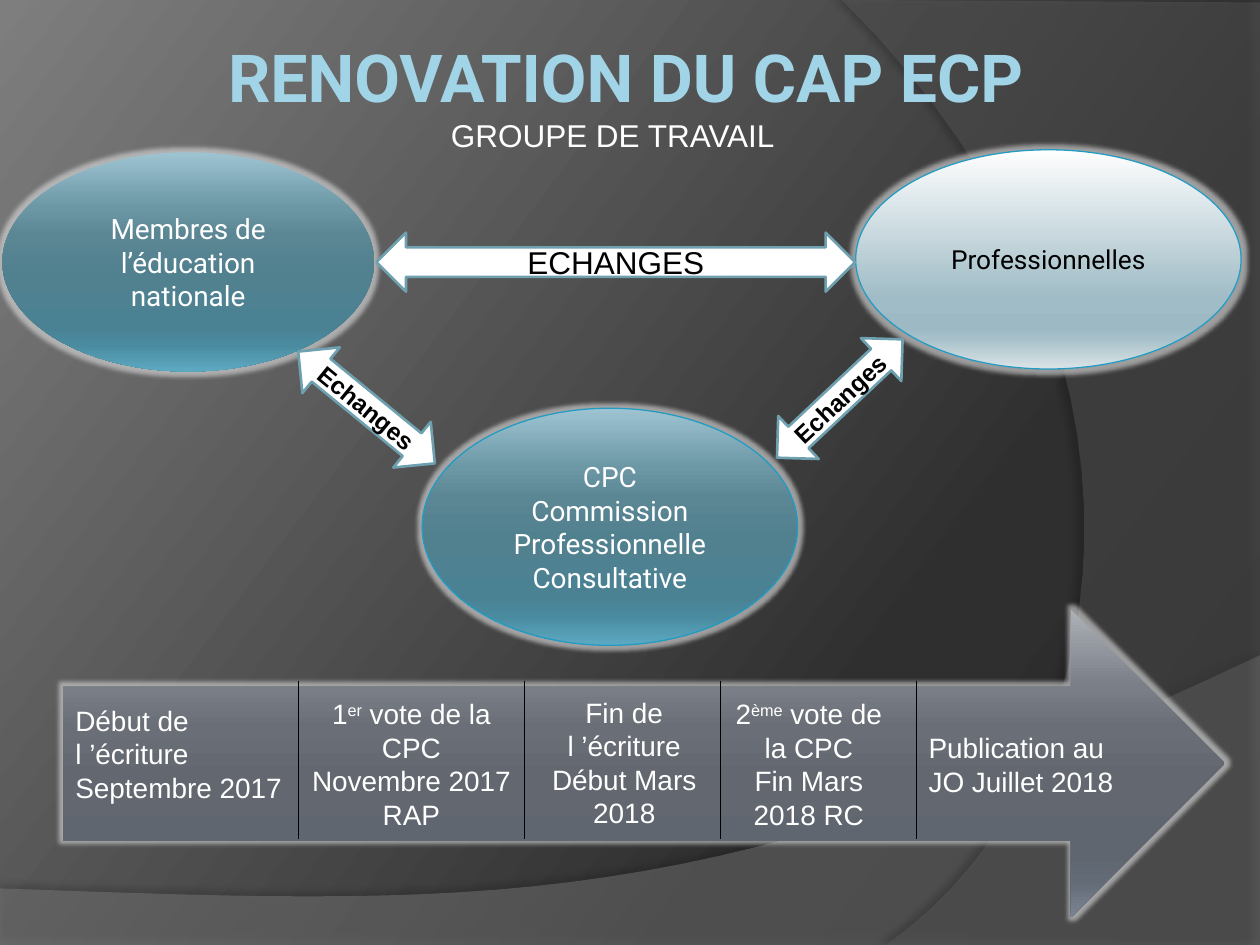
from lxml import etree
from pptx import Presentation
from pptx.dml.color import RGBColor
from pptx.enum.shapes import MSO_CONNECTOR, MSO_SHAPE
from pptx.enum.text import MSO_ANCHOR, PP_ALIGN
from pptx.oxml import parse_xml
from pptx.oxml.ns import qn
from pptx.util import Cm, Pt

NS = 'xmlns:a="http://schemas.openxmlformats.org/drawingml/2006/main"'
COLORS = {"white": "FFFFFF", "black": "000000", "title": "A1D4E7", "outline": "239BC2",
          "arrow": "6EA0B0", "glow": "E0E0E0", "swoosh": "7F7F7F", "disc": "5E5E5E"}
GRADIENTS = {  # angle, then (position, colour)
    "page": (217, [(0, "282828"), (30, "2F2F2F"), (100, "7E7E7E")]),
    "teal": (90, [(0, "9EC4D2"), (25, "6C97A5"), (38, "5B8694"), (55, "51808F"),
                  (80, "4A8294"), (88, "4A8BA0"), (100, "5DAAC2")]),
    "pale": (90, [(0, "FEFEFE"), (68, "A0BCC6"), (81, "9CB9C4"), (86, "A7C0C9"),
                  (100, "DAE4E7")]),
    "slate": (90, [(0, "ACB0B7"), (25, "7A7F87"), (38, "6A6F77"), (55, "626770"),
                   (80, "5F6670"), (88, "636B77"), (100, "7B8492")]),
}

# Content: positions are left, top, width, height in cm
TITLE = ("RENOVATION DU CAP ECP", (0.51, 0.74, 24.21, 1.78))
SUBTITLE = ("GROUPE DE TRAVAIL", (8.84, 2.21, 7.49, 1.02))
GROUPS = [  # text, box, gradient, outline, text format
    ("Membres de l’éducation nationale", (0.05, 3.07, 7.49, 4.42), "teal", None,
     {"size": 16, "color": "white"}),
    ("Professionnelles", (17.25, 3.02, 7.77, 4.42), "pale", "outline",
     {"size": 15, "color": "black"}),
    ("CPC\nCommission Professionnelle Consultative", (8.51, 8.23, 7.57, 4.78), "teal",
     "outline", {"size": 16, "color": "white"}),
]
EXCHANGES = [  # text, box, rotation, text format
    ("ECHANGES", (7.59, 4.69, 9.65, 1.19), 0, {"size": 18}),
    ("Echanges", (5.61, 7.62, 3.56, 1.19), 39.3, {"size": 14, "bold": True}),
    ("Echanges", (15.19, 7.44, 3.48, 1.19), 316.7, {"size": 14, "bold": True}),
]
TIMELINE = (1.27, 12.29, 23.42, 6.2)
STEPS = [  # text (^ around superscripts), box, alignment
    ("Début de\nl ’écriture\nSeptembre 2017", (1.27, 14.05, 5.11, 3.07), PP_ALIGN.LEFT),
    ("1^er^ vote de la CPC\nNovembre 2017 RAP", (6.02, 13.92, 4.55, 3), PP_ALIGN.CENTER),
    ("Fin de\nl ’écriture\nDébut Mars\n2018", (10.39, 13.89, 4.39, 3), PP_ALIGN.CENTER),
    ("2^ème^ vote de la CPC\nFin Mars 2018 RC", (14.5, 13.92, 3.61, 3), PP_ALIGN.CENTER),
    ("Publication au JO Juillet 2018", (18.47, 14.61, 4.8, 1.63), PP_ALIGN.LEFT),
]
DIVIDERS, DIVIDER_Y = (6.02, 10.57, 14.53, 18.47), (13.72, 16.92)
BACKDROP = [  # straight corners, curve (4 control points), colour, opacity, shadow
    ([(0, 19.05), (25.4, 19.05)], [(25.4, 13.21), (14.2, 18.52), (9.93, 18.26), (0, 17.91)],
     "swoosh", 45, {"alpha": 35, "dist": 3.5, "dir": 270}),
    ([(25.4, 0.05), (25.4, 19.05)], [(17.86, 19.05), (22.63, 15.72), (24.05, 6.99), (16.97, 0)],
     "disc", 40, {"alpha": 45, "dist": 4, "dir": 180}),
]


def rgb(name):
    return RGBColor.from_string(COLORS[name])


def cm(box):
    return [Cm(v) for v in box]


def set_gradient(fill, name):
    angle, stops = GRADIENTS[name]
    fill.gradient()
    fill.gradient_angle = 360 - angle  # python-pptx counts anticlockwise
    gs_list = fill._fill._gradFill.find(qn("a:gsLst"))
    for gs in list(gs_list):
        gs_list.remove(gs)
    for pos, color in stops:
        gs_list.append(parse_xml(f'<a:gs {NS} pos="{pos * 1000}"><a:srgbClr val="{color}"/></a:gs>'))


def set_line(sp, color, width):
    if color:
        sp.line.color.rgb = rgb(color)
        sp.line.width = Pt(width)
    else:
        sp.line.fill.background()


def add_effect(sp, xml):
    sp.shadow.inherit = False
    sp._element.spPr.find(qn("a:effectLst")).append(parse_xml(xml))


def add_glow(sp):
    add_effect(sp, f'<a:glow {NS} rad="63500"><a:srgbClr val="{COLORS["glow"]}">'
                   '<a:alpha val="60000"/></a:srgbClr></a:glow>')


def write(sp, text, align=PP_ALIGN.CENTER, **fmt):
    tf = sp.text_frame
    tf.word_wrap = True
    fmt = {"size": 16, "name": "Arial", "bold": False, "color": "white"} | fmt
    color, fmt["size"] = fmt.pop("color"), Pt(fmt["size"])
    for i, line in enumerate(text.split("\n")):
        p = tf.paragraphs[0] if i == 0 else tf.add_paragraph()
        p.alignment = align
        for j, part in enumerate(line.split("^")):
            r = p.add_run()
            r.text = part
            for key, value in fmt.items():
                setattr(r.font, key, value)
            r.font.color.rgb = rgb(color)
            if j % 2:
                r._r.get_or_add_rPr().set("baseline", "30000")
    return tf


def bezier(points, steps=30):
    for i in range(steps + 1):
        t = i / steps
        weights = ((1 - t) ** 3, 3 * t * (1 - t) ** 2, 3 * t ** 2 * (1 - t), t ** 3)
        yield tuple(sum(w * pt[k] for w, pt in zip(weights, points)) for k in (0, 1))


prs = Presentation()
prs.slide_width, prs.slide_height = Cm(25.4), Cm(19.05)
s = prs.slides.add_slide(prs.slide_layouts[5])
set_gradient(s.background.fill, "page")

# Curved backdrop
for corners, curve, color, opacity, shadow in BACKDROP:
    pts = [cm(pt) for pt in corners + list(bezier(curve))]
    builder = s.shapes.build_freeform(*pts[0])
    builder.add_line_segments(pts[1:], close=True)
    sp = builder.convert_to_shape()
    sp.fill.solid()
    sp.fill.fore_color.rgb = rgb(color)
    clr = sp._element.spPr.find(".//" + qn("a:srgbClr"))
    etree.SubElement(clr, qn("a:alpha")).set("val", str(opacity * 1000))
    set_line(sp, None, 0)
    add_effect(sp, f'<a:outerShdw {NS} blurRad="{Pt(4)}" dist="{Pt(shadow["dist"])}" '
                   f'dir="{shadow["dir"] * 60000}"><a:srgbClr val="{COLORS["black"]}">'
                   f'<a:alpha val="{shadow["alpha"] * 1000}"/></a:srgbClr></a:outerShdw>')

# Title, brought in front of the backdrop, and subtitle
text, box = TITLE
title = s.shapes.title
s.shapes._spTree.append(title._element)
title.left, title.top, title.width, title.height = cm(box)
tf = write(title, text, size=37.8, name="Roboto", bold=True, color="title")
for key, value in {"margin_top": 0, "margin_bottom": 0, "vertical_anchor": MSO_ANCHOR.TOP}.items():
    setattr(tf, key, value)
text, box = SUBTITLE
write(s.shapes.add_textbox(*cm(box)), text, PP_ALIGN.LEFT, size=18)

# Working groups
for text, box, gradient, outline, fmt in GROUPS:
    sp = s.shapes.add_shape(MSO_SHAPE.OVAL, *cm(box))
    set_gradient(sp.fill, gradient)
    set_line(sp, outline, 0.75)
    add_glow(sp)
    write(sp, text, name="Roboto", **fmt)

# Exchange arrows
for text, box, rotation, fmt in EXCHANGES:
    sp = s.shapes.add_shape(MSO_SHAPE.LEFT_RIGHT_ARROW, *cm(box))
    sp.rotation = rotation
    sp.shadow.inherit = False
    sp.fill.solid()
    sp.fill.fore_color.rgb = rgb("white")
    set_line(sp, "arrow", 1.5)
    write(sp, text, color="black", **fmt)

# Timeline arrow, steps and dividers
sp = s.shapes.add_shape(MSO_SHAPE.RIGHT_ARROW, *cm(TIMELINE))
set_gradient(sp.fill, "slate")
set_line(sp, None, 0)
add_glow(sp)
for text, box, align in STEPS:
    write(s.shapes.add_textbox(*cm(box)), text, align)
for x in DIVIDERS:
    line = s.shapes.add_connector(MSO_CONNECTOR.STRAIGHT, Cm(x), Cm(DIVIDER_Y[0]),
                                  Cm(x), Cm(DIVIDER_Y[1]))
    set_line(line, "black", 0.75)
    etree.SubElement(line._element.spPr, qn("a:effectLst"))

prs.save("out.pptx")
